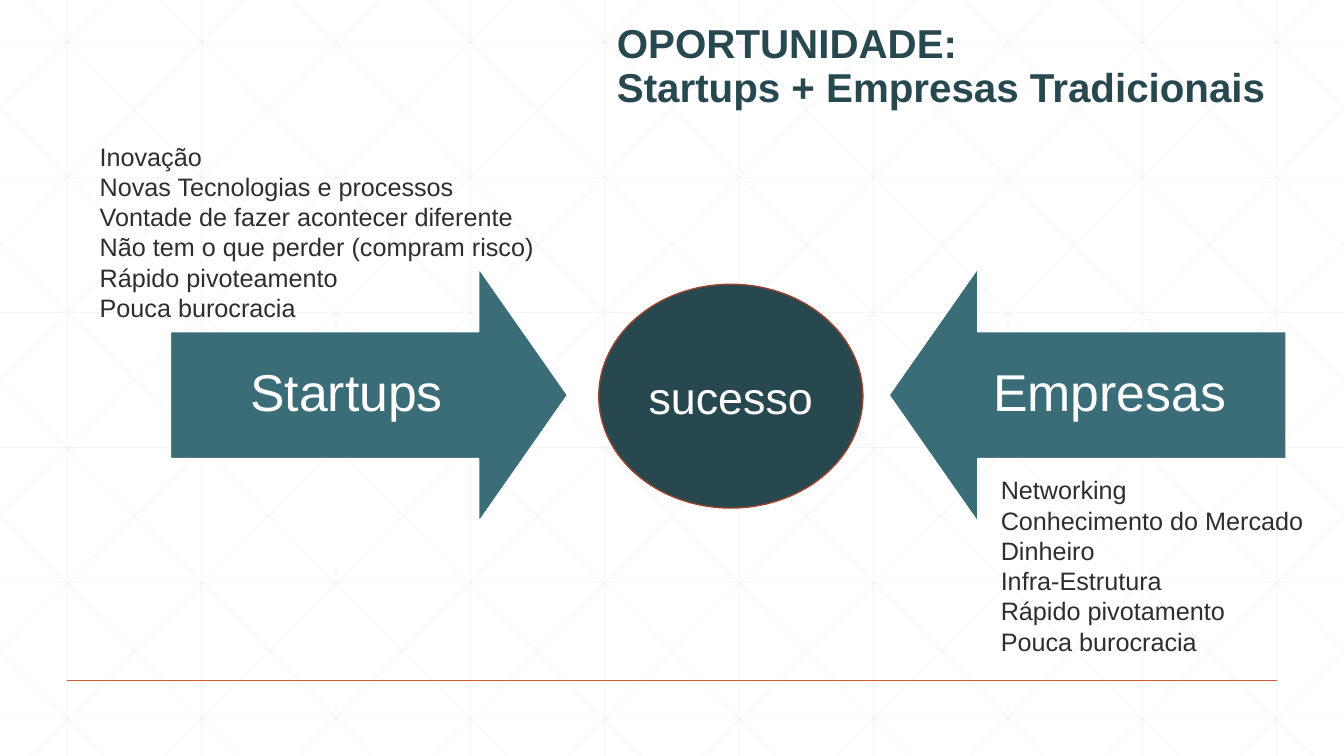
from dataclasses import dataclass

from lxml.etree import SubElement
from pptx import Presentation
from pptx.dml.color import RGBColor
from pptx.enum.shapes import MSO_CONNECTOR, MSO_SHAPE
from pptx.enum.text import MSO_ANCHOR, MSO_AUTO_SIZE, PP_ALIGN
from pptx.oxml.ns import qn
from pptx.util import Emu, Pt

COLUMNS, ROWS, UNIT = 160, 90, 76200


@dataclass(frozen=True)
class Theme:
    """Colours, font and type sizes of the slide."""

    font: str = "Arial"
    white: str = "FFFFFF"
    grid: str = "D9D9D9"
    accent: str = "D15A3E"
    accent_dark: str = "9B432E"
    teal: str = "3B6D79"
    teal_dark: str = "284850"
    body: str = "2D2E2D"
    title_size: float = 28.8
    body_size: float = 18
    arrow_size: float = 37
    circle_size: float = 32


class SlideBuilder:
    """Draws themed elements on one slide, measured in grid columns and rows."""

    def __init__(self, presentation, theme):
        """Add a title-only slide."""
        self.theme = theme
        self.slide = presentation.slides.add_slide(presentation.slide_layouts[5])

    def cells(self, *values):
        """Convert columns or rows to lengths."""
        return [Emu(round(value * UNIT)) for value in values]

    def set_text(self, text_frame, text, size, color, bold=False, align=PP_ALIGN.LEFT, spacing=1.0):
        """Fill a text frame and format all of its runs."""
        text_frame.word_wrap = True
        text_frame.text = text
        for paragraph in text_frame.paragraphs:
            paragraph.alignment = align
            paragraph.line_spacing = spacing
            for run in paragraph.runs:
                run.font.name = self.theme.font
                run.font.size = Pt(size)
                run.font.bold = bold
                run.font.color.rgb = RGBColor.from_string(color)

    def line(self, start, end, color, width, opacity=100, shapes=None):
        """Draw a straight line without a shadow."""
        shapes = self.slide.shapes if shapes is None else shapes
        connector = shapes.add_connector(MSO_CONNECTOR.STRAIGHT, *self.cells(*start, *end))
        connector.line.width = Pt(width)
        connector.line.color.rgb = RGBColor.from_string(color)
        properties = connector._element.spPr
        if opacity < 100:
            fill_color = properties.find(".//" + qn("a:srgbClr"))
            SubElement(fill_color, qn("a:alpha"), val=str(opacity * 1000))
        SubElement(properties, qn("a:effectLst"))

    def background_grid(self, step=16, run=89.4):
        """Draw the faint grid with its mirrored diagonals, clipped to the slide."""
        segments = [((x, 0), (x, ROWS)) for x in range(8, COLUMNS, step)]
        segments += [((0, 5.04 + 16.08 * i), (COLUMNS, 5.04 + 16.08 * i)) for i in range(6)]
        for index in range(-5, 10):
            top = 3 + step * index
            first = max(0, -top / run)
            last = min(1, (COLUMNS - top) / run)
            falling = [(top + run * share, ROWS * share) for share in (first, last)]
            segments += [falling, [(COLUMNS - x, y) for x, y in falling]]
        group = self.slide.shapes.add_group_shape()
        for start, end in segments:
            self.line(start, end, self.theme.grid, 0.5, 25, group.shapes)

    def title(self, text, box):
        """Place the title above the grid and format it."""
        title = self.slide.shapes.title
        self.slide.shapes._spTree.append(title._element)
        title.left, title.top, title.width, title.height = self.cells(*box)
        frame = title.text_frame
        frame.auto_size = MSO_AUTO_SIZE.NONE
        frame.vertical_anchor = MSO_ANCHOR.BOTTOM
        frame.margin_bottom = self.cells(5.76)[0]
        self.set_text(frame, text, self.theme.title_size, self.theme.teal_dark, True, spacing=0.9)

    def text_list(self, items, box):
        """Add a text box with one paragraph per item."""
        frame = self.slide.shapes.add_textbox(*self.cells(*box)).text_frame
        self.set_text(frame, "\n".join(items), self.theme.body_size, self.theme.body)
        frame.auto_size = MSO_AUTO_SIZE.SHAPE_TO_FIT_TEXT

    def shape(self, kind, text, box, fill, outline, size, spacing=1.0):
        """Add a filled shape with a centred label."""
        shape = self.slide.shapes.add_shape(kind, *self.cells(*box))
        shape.shadow.inherit = False
        shape.fill.solid()
        shape.fill.fore_color.rgb = RGBColor.from_string(fill)
        shape.line.color.rgb = RGBColor.from_string(outline)
        shape.line.width = Pt(1)
        shape.text_frame.vertical_anchor = MSO_ANCHOR.MIDDLE
        self.set_text(shape.text_frame, text, size, self.theme.white, align=PP_ALIGN.CENTER, spacing=spacing)
        return shape

    def arrow(self, kind, text, left):
        """Add a labelled block arrow."""
        theme = self.theme
        box = (left, 31.92, 47.28, 30.24)
        arrow = self.shape(kind, text, box, theme.teal, theme.white, theme.arrow_size, 0.9)
        arrow.adjustments[0] = 0.5
        arrow.adjustments[1] = 0.35

    def circle(self, text, box):
        """Add the central ellipse."""
        theme = self.theme
        self.shape(MSO_SHAPE.OVAL, text, box, theme.teal_dark, theme.accent_dark, theme.circle_size)


def main():
    """Build and save the slide."""
    presentation = Presentation()
    presentation.slide_width = Emu(COLUMNS * UNIT)
    presentation.slide_height = Emu(ROWS * UNIT)
    theme = Theme()
    builder = SlideBuilder(presentation, theme)
    builder.background_grid()
    builder.line((8, 81), (152, 81), theme.accent, 1)
    builder.arrow(MSO_SHAPE.RIGHT_ARROW, "Startups", 20.28)
    builder.arrow(MSO_SHAPE.LEFT_ARROW, "Empresas", 105.84)
    builder.title("OPORTUNIDADE:\vStartups + Empresas Tradicionais", (72.24, 1.44, 80.88, 17.52))
    builder.text_list(
        ["Inovação", "Novas Tecnologias e processos", "Vontade de fazer acontecer diferente",
         "Não tem o que perder (compram risco)", "Rápido pivoteamento", "Pouca burocracia"],
        (10.68, 16.2, 56.4, 23.04),
    )
    builder.text_list(
        ["Networking", "Conhecimento do Mercado", "Dinheiro",
         "Infra-Estrutura", "Rápido pivotamento", "Pouca burocracia"],
        (117.96, 55.92, 40.2, 23.04),
    )
    builder.circle("sucesso", (71.28, 33.84, 31.44, 26.64))
    presentation.save("out.pptx")


if __name__ == "__main__":
    main()
